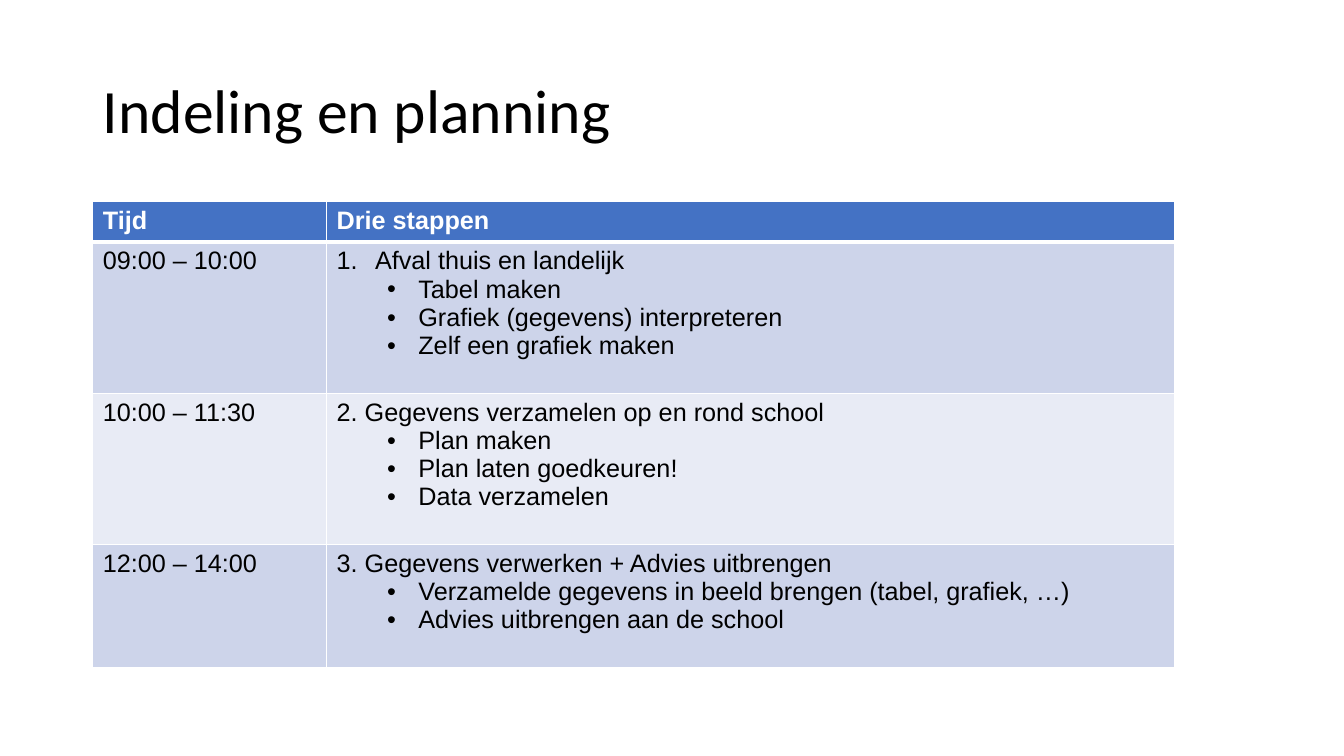
from lxml.etree import SubElement
from pptx import Presentation
from pptx.dml.color import RGBColor
from pptx.enum.text import MSO_ANCHOR, MSO_AUTO_SIZE, PP_ALIGN
from pptx.oxml import parse_xml
from pptx.oxml.ns import nsdecls, qn
from pptx.util import Inches, Pt

BLACK = RGBColor(0x00, 0x00, 0x00)
WHITE = RGBColor(0xFF, 0xFF, 0xFF)
BLUE = RGBColor(0x44, 0x72, 0xC4)
BANDS = (RGBColor(0xCD, 0xD4, 0xEA), RGBColor(0xE8, 0xEB, 0xF5))

COL_WIDTHS = (2.32, 8.41)
ROW_HEIGHTS = (0.4, 1.5, 1.5, 1.22)
HEADINGS = ("Tijd", "Drie stappen")
PLANNING = (
    ("09:00 – 10:00", "Afval thuis en landelijk",
     ("Tabel maken", "Grafiek (gegevens) interpreteren", "Zelf een grafiek maken")),
    ("10:00 – 11:30", "2. Gegevens verzamelen op en rond school",
     ("Plan maken", "Plan laten goedkeuren!", "Data verzamelen")),
    ("12:00 – 14:00", "3. Gegevens verwerken + Advies uitbrengen",
     ("Verzamelde gegevens in beeld brengen (tabel, grafiek, …)",
      "Advies uitbrengen aan de school")),
)


class Deck:
    title_font = "Calibri"
    table_font = "Arial"

    def __init__(self):
        self.prs = Presentation()
        self.prs.slide_width = Inches(13.33)
        self.prs.slide_height = Inches(7.5)
        self.s = self.prs.slides.add_slide(self.prs.slide_layouts[5])

    def format(self, p, name, size, color, bold=False):
        for r in p.runs:
            r.font.name = name
            r.font.size = Pt(size)
            r.font.color.rgb = color
            r.font.bold = bold

    def title(self, text):
        sp = self.s.shapes.title
        sp.left, sp.top = Inches(0.92), Inches(0.4)
        sp.width, sp.height = Inches(11.5), Inches(1.45)
        tf = sp.text_frame
        tf.text = text
        tf.auto_size = MSO_AUTO_SIZE.NONE
        tf.vertical_anchor = MSO_ANCHOR.MIDDLE
        p = tf.paragraphs[0]
        p.alignment = PP_ALIGN.LEFT
        p.line_spacing = 0.9
        self.format(p, self.title_font, 44, BLACK)

    def table(self, left, top, widths, heights):
        frame = self.s.shapes.add_table(
            len(heights), len(widths), Inches(left), Inches(top),
            Inches(sum(widths)), Inches(sum(heights)))
        table = frame.table
        for column, width in zip(table.columns, widths):
            column.width = Inches(width)
        for row, height in zip(table.rows, heights):
            row.height = Inches(height)
        return table

    def cell(self, cell, text, fill, top=1, bottom=1, color=BLACK, bold=False):
        cell.text_frame.text = text
        cell.fill.solid()
        cell.fill.fore_color.rgb = fill
        self.format(cell.text_frame.paragraphs[0], self.table_font, 18, color, bold)
        borders = (("lnL", 1), ("lnR", 1), ("lnT", top), ("lnB", bottom))
        for i, (tag, width) in enumerate(borders):
            cell._tc.get_or_add_tcPr().insert(i, parse_xml(
                f'<a:{tag} {nsdecls("a")} w="{Pt(width)}"><a:solidFill>'
                f'<a:srgbClr val="{WHITE}"/></a:solidFill></a:{tag}>'))

    def mark(self, p, margin, indent, tag, **attributes):
        pPr = p._p.get_or_add_pPr()
        pPr.set("marL", str(Inches(margin)))
        pPr.set("indent", str(Inches(indent)))
        SubElement(SubElement(pPr, qn("a:buClr")), qn("a:srgbClr"), val=str(BLACK))
        SubElement(pPr, qn("a:buFont"), typeface=self.table_font)
        SubElement(pPr, qn(tag), **attributes)

    def bullets(self, cell, items):
        for item in items:
            p = cell.text_frame.add_paragraph()
            p.text = item
            p.level = 1
            self.mark(p, 0.81, -0.31, "a:buChar", char="•")
            self.format(p, self.table_font, 18, BLACK)


def main():
    deck = Deck()
    deck.title("Indeling en planning")
    table = deck.table(0.92, 2, COL_WIDTHS, ROW_HEIGHTS)
    for i, heading in enumerate(HEADINGS):
        deck.cell(table.cell(0, i), heading, BLUE, bottom=3, color=WHITE, bold=True)
    for i, (time, step, tasks) in enumerate(PLANNING):
        fill = BANDS[i % 2]
        top = 3 if i == 0 else 1
        deck.cell(table.cell(i + 1, 0), time, fill, top)
        step_cell = table.cell(i + 1, 1)
        deck.cell(step_cell, step, fill, top)
        deck.bullets(step_cell, tasks)
    first_step = table.cell(1, 1).text_frame.paragraphs[0]
    deck.mark(first_step, 0.38, -0.38, "a:buAutoNum", type="arabicPeriod")
    deck.prs.save("out.pptx")


if __name__ == "__main__":
    main()
